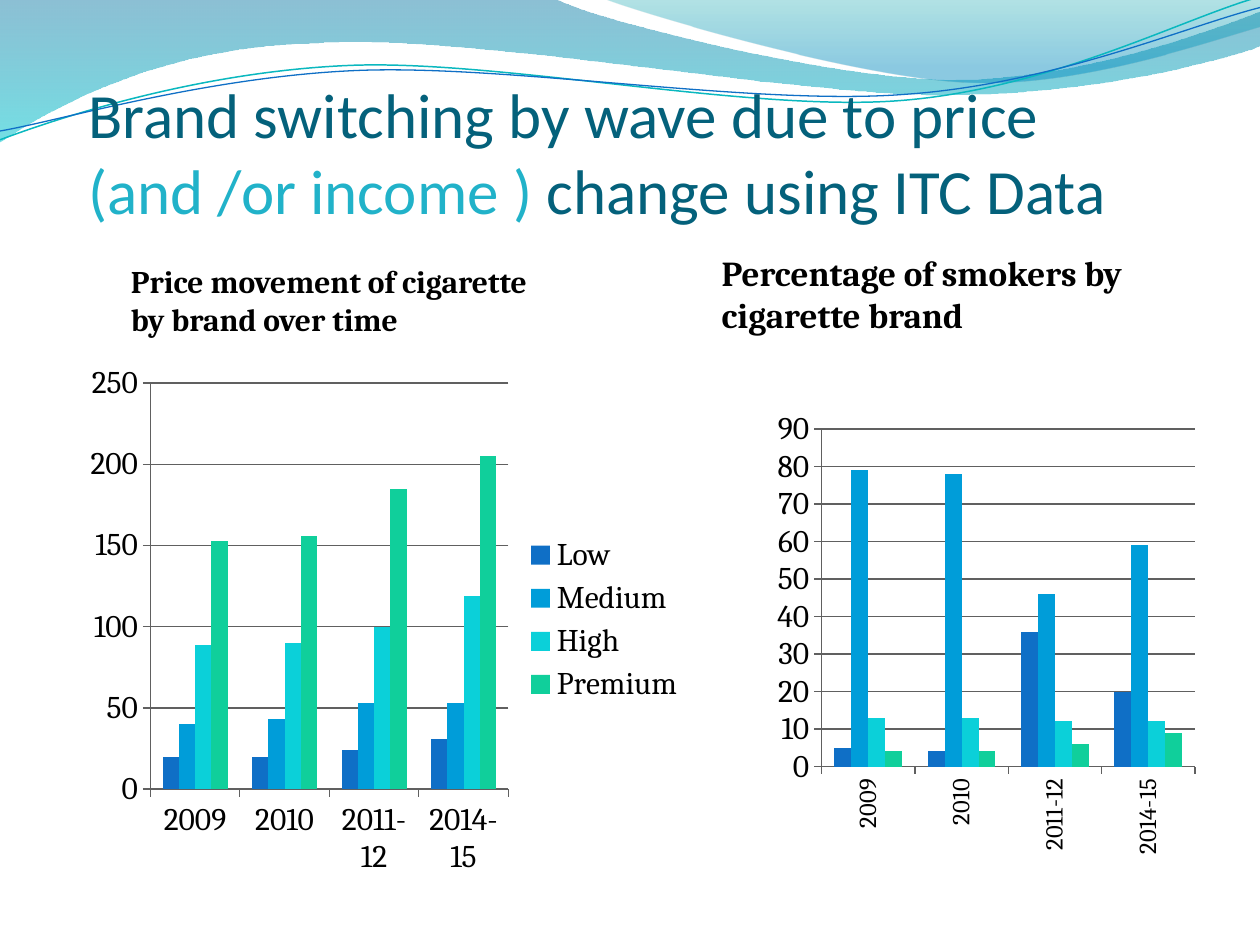
from lxml import etree
from pptx import Presentation
from pptx.chart.data import CategoryChartData
from pptx.dml.color import RGBColor
from pptx.enum.chart import XL_CHART_TYPE, XL_LEGEND_POSITION, XL_TICK_MARK
from pptx.enum.text import MSO_ANCHOR
from pptx.oxml import parse_xml
from pptx.oxml.ns import nsdecls, qn
from pptx.util import Inches, Pt

BLACK = RGBColor(0x00, 0x00, 0x00)
AXIS_GRAY = RGBColor(0x60, 0x60, 0x60)
TITLE_BLUE = RGBColor(0x04, 0x61, 0x7B)
TITLE_CYAN = RGBColor(0x21, 0xB2, 0xC9)
WAVE_TEAL = RGBColor(0x0A, 0xB8, 0xBF)
BLUE = RGBColor(0x0F, 0x6F, 0xC6)
SERIES_COLORS = (BLUE, RGBColor(0x00, 0x9D, 0xD9),
                 RGBColor(0x0B, 0xD0, 0xD9), RGBColor(0x10, 0xCF, 0x9B))

YEARS = ("2009", "2010", "2011-12", "2014-15")
PRICES = {
    "Low": (20, 20, 24, 31),
    "Medium": (40, 43, 53, 53),
    "High": (89, 90, 100, 119),
    "Premium": (153, 156, 185, 205),
}
SMOKERS = {
    "Series 1": (5, 4, 36, 20),
    "Series 2": (79, 78, 46, 59),
    "Series 3": (13, 13, 12, 12),
    "Series 4": (4, 4, 6, 9),
}

# A path is a start point followed by segments: 2 numbers for a line, 6 for a Bézier curve.
WIDE_BAND = [
    (0, 0), (4.4, -0.01), (4.76, 0.17, 6.64, 0.63, 7.58, 0.63),
    (8.53, 0.63, 9.58, 0.26, 10, 0.09), (10.01, 0.36),
    (9.83, 0.44, 8.7, 0.76, 7.46, 0.75), (6.22, 0.75, 3.82, 0.28, 2.57, 0.34),
    (1.29, 0.36, 0.46, 0.83, -0.01, 1.13),
]
RIGHT_BAND = [
    (4.79, -0.01), (5.09, 0.11, 6.82, 0.62, 7.69, 0.65),
    (8.56, 0.69, 9.61, 0.32, 10, 0.21), (10, 0),
]
TEAL_WAVE = [
    (0, 1.11), (0.48, 0.93, 1.58, 0.57, 2.77, 0.52),
    (3.95, 0.47, 5.93, 0.89, 7.13, 0.8), (8.33, 0.71, 9.38, 0.15, 9.98, -0.02),
]
BLUE_WAVE = [
    (0, 1.04), (0.47, 0.96, 1.64, 0.61, 2.83, 0.56),
    (4.03, 0.51, 5.97, 0.84, 7.17, 0.75), (8.36, 0.67, 9.41, 0.21, 10, 0.06),
]


def add_path(slide, path, close):
    """Build the outline from segment ends, then bend the curved segments."""
    ends = [(Inches(segment[-2]), Inches(segment[-1])) for segment in path]
    builder = slide.shapes.build_freeform(*ends[0])
    builder.add_line_segments(ends[1:], close=close)
    shape = builder.convert_to_shape()
    shape.shadow.inherit = False
    lines = list(shape.element.iter(qn("a:lnTo")))
    for line, segment in zip(lines, path[1:]):
        if len(segment) == 6:
            line.tag = qn("a:cubicBezTo")
            controls = (segment[0:2], segment[2:4])
            for index, (x, y) in enumerate(controls):
                point = parse_xml(f'<a:pt {nsdecls("a")} x="{Inches(x) - shape.left}" '
                                  f'y="{Inches(y) - shape.top}"/>')
                line.insert(index, point)
    return shape


def add_band(slide, path, stops):
    """Add a vertical gradient band; a stop is position, colour and opacity in percent."""
    shape = add_path(slide, path, close=True)
    shape.line.fill.background()
    stop_xml = "".join(
        f'<a:gs pos="{position * 1000}"><a:srgbClr val="{color}">'
        f'<a:alpha val="{opacity * 1000}"/></a:srgbClr></a:gs>'
        for position, color, opacity in stops)
    gradient = parse_xml(f'<a:gradFill {nsdecls("a")} rotWithShape="1"><a:gsLst>{stop_xml}'
                         '</a:gsLst><a:lin ang="5400000" scaled="0"/></a:gradFill>')
    shape.element.spPr.find(qn("a:custGeom")).addnext(gradient)


def add_wave(slide, path, color, width):
    shape = add_path(slide, path, close=False)
    shape.fill.background()
    shape.line.color.rgb = color
    shape.line.width = Pt(width)


def add_text_box(slide, left, top, width, height):
    frame = slide.shapes.add_textbox(
        Inches(left), Inches(top), Inches(width), Inches(height)).text_frame
    frame.word_wrap = True
    return frame


def add_title(slide):
    frame = add_text_box(slide, 0.7, 0.55, 9, 1.25)
    frame.vertical_anchor = MSO_ANCHOR.BOTTOM
    frame.margin_left = frame.margin_right = frame.margin_bottom = 0
    paragraph = frame.paragraphs[0]
    paragraph.font.name = "Calibri"
    paragraph.font.size = Pt(36)
    for text, color in (("Brand switching by wave due to price ", TITLE_BLUE),
                        ("(and /or income ) ", TITLE_CYAN),
                        ("change using ITC Data", TITLE_BLUE)):
        run = paragraph.add_run()
        run.text = text
        run.font.color.rgb = color


def add_heading(slide, text, left, top, width, height, size):
    paragraph = add_text_box(slide, left, top, width, height).paragraphs[0]
    paragraph.text = text
    font = paragraph.font
    font.name, font.size, font.bold = "Cambria", Pt(size), True
    font.color.rgb = BLACK


def add_column_chart(slide, values, left, top, width, height, maximum, step):
    data = CategoryChartData()
    data.categories = YEARS
    for name, series_values in values.items():
        data.add_series(name, series_values)
    chart = slide.shapes.add_chart(
        XL_CHART_TYPE.COLUMN_CLUSTERED, Inches(left), Inches(top),
        Inches(width), Inches(height), data).chart
    chart.has_title = chart.has_legend = False
    chart.font.name, chart.font.size = "Cambria", Pt(18)
    chart.font.color.rgb = BLACK
    plot = chart.plots[0]
    plot.gap_width, plot.overlap, plot.vary_by_categories = 150, 0, False
    for series, color in zip(plot.series, SERIES_COLORS):
        series.format.fill.solid()
        series.format.fill.fore_color.rgb = color
    value_axis = chart.value_axis
    value_axis.minimum_scale, value_axis.maximum_scale = 0, maximum
    value_axis.major_unit = step
    value_axis.has_major_gridlines = True
    for line in (value_axis.major_gridlines.format.line, value_axis.format.line,
                 chart.category_axis.format.line):
        line.color.rgb = AXIS_GRAY
        line.width = Pt(0.75)
    for axis in (value_axis, chart.category_axis):
        axis.major_tick_mark = XL_TICK_MARK.OUTSIDE
    return chart


def add_legend(chart):
    chart.has_legend = True
    chart.legend.position = XL_LEGEND_POSITION.RIGHT
    chart.legend.include_in_layout = False


def turn_category_labels(chart, size):
    font = chart.category_axis.tick_labels.font
    font.name, font.size = "Cambria", Pt(size)
    font.color.rgb = BLACK
    body = chart.element.find(f'.//{qn("c:catAx")}/{qn("c:txPr")}/{qn("a:bodyPr")}')
    body.set("rot", "-5400000")
    body.set("vert", "horz")


def set_plot_area(chart, x, y, w, h):
    """Place the inner plot area, in fractions of the chart."""
    plot_area = chart.element.find(f'.//{qn("c:plotArea")}')
    for old in plot_area.findall(qn("c:layout")):
        plot_area.remove(old)
    layout = parse_xml(f'<c:layout {nsdecls("c")}><c:manualLayout/></c:layout>')
    settings = (("layoutTarget", "inner"), ("xMode", "edge"), ("yMode", "edge"),
                ("x", x), ("y", y), ("w", w), ("h", h))
    for tag, value in settings:
        etree.SubElement(layout[0], qn(f"c:{tag}")).set("val", str(value))
    plot_area.insert(0, layout)


def main():
    presentation = Presentation()
    presentation.slide_width, presentation.slide_height = Inches(10), Inches(7.5)
    slide = presentation.slides.add_slide(presentation.slide_layouts[6])

    add_band(slide, WIDE_BAND, ((0, "0074A1", 45), (100, "00C6CF", 55)))
    add_band(slide, RIGHT_BAND, ((0, "00A1A9", 30), (80, "008BBF", 45)))
    add_wave(slide, TEAL_WAVE, WAVE_TEAL, 0.85)
    add_wave(slide, BLUE_WAVE, BLUE, 0.75)
    add_title(slide)

    price_chart = add_column_chart(slide, PRICES, 0.62, 2.81, 4.92, 4.22, 250, 50)
    add_legend(price_chart)
    smoker_chart = add_column_chart(slide, SMOKERS, 5.79, 3.04, 4.06, 4.06, 90, 10)
    turn_category_labels(smoker_chart, 14)
    set_plot_area(smoker_chart, 0.18, 0.09, 0.73, 0.66)

    add_heading(slide, "Percentage of smokers by cigarette brand", 5.63, 1.95, 3.83, 0.77, 20)
    add_heading(slide, "Price movement of cigarette by brand over time",
                0.94, 2.03, 3.59, 0.71, 18)
    presentation.save("out.pptx")


if __name__ == "__main__":
    main()
